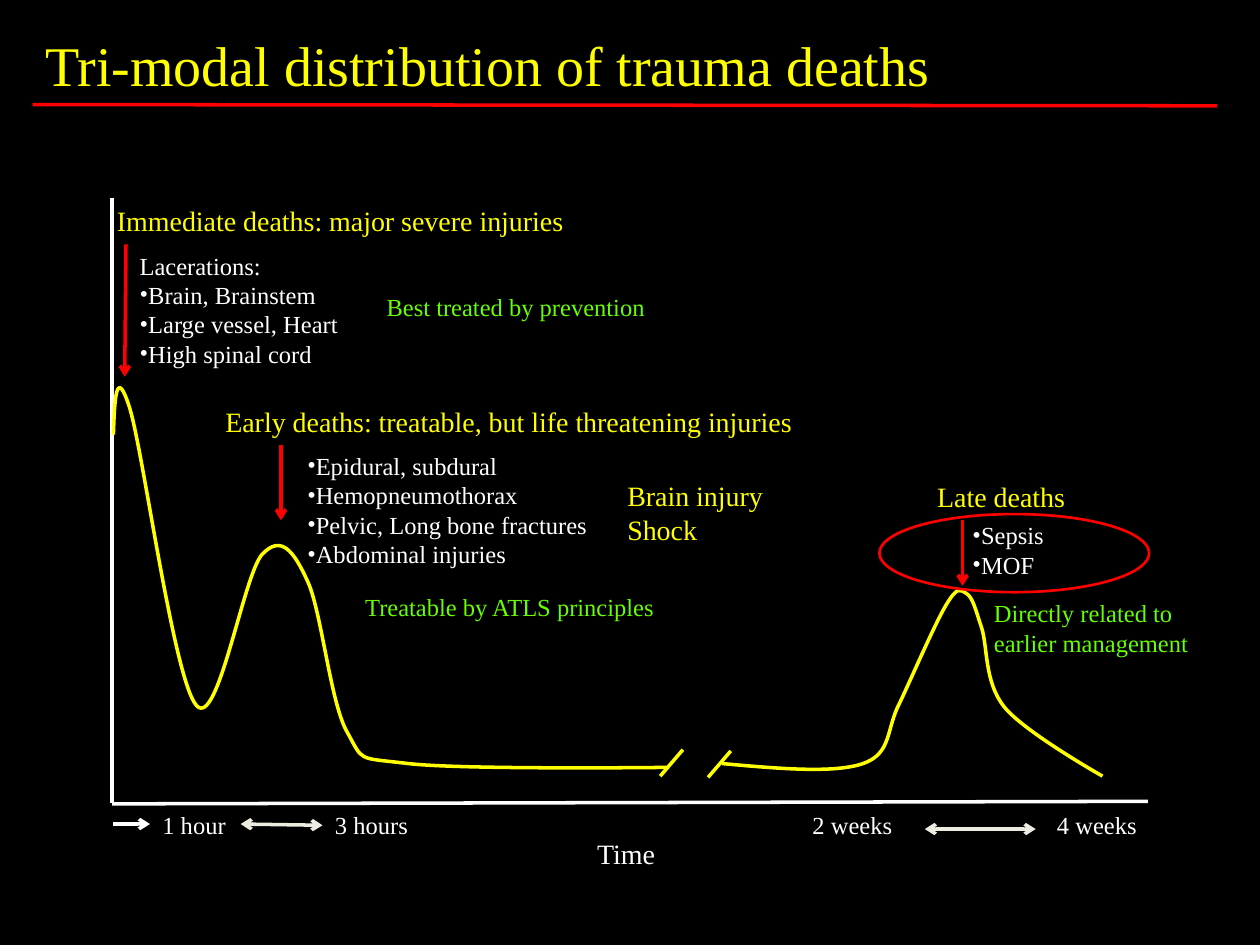
import pptx
import pptx.util
import pptx.dml.color
import pptx.enum.shapes
import pptx.enum.text
import pptx.oxml.ns
from lxml import etree

Inches = pptx.util.Inches
FONT = "Times New Roman"
COLORS = {
    "background": "000000",
    "yellow": "FFFF00",
    "white": "FFFFFF",
    "red": "FF0000",
    "green": "66FF00",
    "cream": "EEECE1",
}
EARLY_CURVE = [
    (0.9, 3.45),
    (0.91, 3.17), (0.92, 2.89), (1.03, 3.24),
    (1.14, 3.6), (1.38, 5.4), (1.56, 5.6),
    (1.73, 5.79), (1.93, 4.57), (2.08, 4.4),
    (2.23, 4.24), (2.33, 4.37), (2.44, 4.61),
    (2.55, 4.84), (2.62, 5.56), (2.75, 5.8),
    (2.89, 6.05), (2.82, 6.01), (3.24, 6.06),
    (3.67, 6.11), (5.31, 6.09), (5.31, 6.09),
]
LATE_CURVE = [
    (5.73, 6.06),
    (6.17, 6.1), (6.62, 6.14), (6.85, 6.06),
    (7.08, 5.98), (7.03, 5.79), (7.14, 5.58),
    (7.24, 5.37), (7.42, 4.95), (7.51, 4.8),
    (7.6, 4.65), (7.62, 4.68), (7.67, 4.71),
    (7.72, 4.74), (7.74, 4.83), (7.79, 4.98),
    (7.84, 5.13), (7.81, 5.41), (7.97, 5.61),
    (8.13, 5.81), (8.75, 6.16), (8.75, 6.16),
]


def rgb(name):
    return pptx.dml.color.RGBColor.from_string(COLORS[name])


def add_xml(parent, tag, **attributes):
    return etree.SubElement(parent, pptx.oxml.ns.qn(tag), **attributes)


def set_line(sp, color, width=2):
    sp.line.color.rgb = rgb(color)
    sp.line.width = pptx.util.Pt(width)


def add_text(slide, box, lines, color, size=14, bullets_from=None, wrap=False):
    sp = slide.shapes.add_textbox(*map(Inches, box))
    tf = sp.text_frame
    tf.word_wrap = wrap
    tf.auto_size = pptx.enum.text.MSO_AUTO_SIZE.SHAPE_TO_FIT_TEXT
    tf.text = "\n".join(lines)
    for i, p in enumerate(tf.paragraphs):
        if bullets_from is not None and i >= bullets_from:
            pPr = p._p.get_or_add_pPr()
            add_xml(pPr, "a:buFont", typeface=FONT)
            add_xml(pPr, "a:buChar", char="•")
        for r in p.runs:
            r.font.name = FONT
            r.font.size = pptx.util.Pt(size)
            r.font.color.rgb = rgb(color)


def add_line(slide, start, end, color, arrows=()):
    sp = slide.shapes.add_connector(
        pptx.enum.shapes.MSO_CONNECTOR.STRAIGHT,
        *map(Inches, start + end))
    set_line(sp, color)
    ln = sp.line._get_or_add_ln()
    for arrow in arrows:
        add_xml(ln, f"a:{arrow}", type="arrow")
    add_xml(sp._element.spPr, "a:effectLst")


def add_curve(slide, points, color):
    start, *rest = [tuple(map(Inches, point)) for point in points]
    builder = slide.shapes.build_freeform(*start, scale=1.0)
    builder.add_line_segments(rest, close=False)
    sp = builder.convert_to_shape()
    sp.shadow.inherit = False
    sp.fill.background()
    set_line(sp, color)
    segments = sp._element.findall(".//" + pptx.oxml.ns.qn("a:lnTo"))
    outline = segments[0].getparent()
    for i in range(0, len(segments), 3):
        bezier = add_xml(outline, "a:cubicBezTo")
        for segment in segments[i:i + 3]:
            bezier.append(segment[0])
            outline.remove(segment)


def add_ellipse(slide, box, color):
    sp = slide.shapes.add_shape(
        pptx.enum.shapes.MSO_SHAPE.OVAL, *map(Inches, box))
    sp.shadow.inherit = False
    sp.fill.background()
    set_line(sp, color, 1.5)


def add_chart_lines(slide):
    add_line(slide, (0.89, 1.57), (0.89, 6.37), "white")
    add_line(slide, (9.11, 6.36), (0.89, 6.38), "white")
    add_curve(slide, EARLY_CURVE, "yellow")
    add_curve(slide, LATE_CURVE, "yellow")


def add_time_axis(slide):
    for left, width, label in (
            (1.19, 0.72, "1 hour"), (2.56, 0.79, "3 hours"),
            (6.35, 0.84, "2 weeks"), (8.29, 0.84, "4 weeks")):
        add_text(slide, (left, 6.38, width, 0.34), [label], "white")
    add_text(slide, (4.64, 6.59, 0.67, 0.37), ["Time"], "white", 16)


def add_phases(slide):
    for box, heading in (
            ((0.83, 1.57, 3.79, 0.37),
             "Immediate deaths: major severe injuries"),
            ((1.69, 3.16, 4.76, 0.37),
             "Early deaths: treatable, but life threatening injuries"),
            ((7.34, 3.76, 1.23, 0.37), "Late deaths")):
        add_text(slide, box, [heading], "yellow", 16)

    add_text(slide, (1.01, 1.94, 1.79, 1.04),
             ["Lacerations:", "Brain, Brainstem", "Large vessel, Heart",
              "High spinal cord"], "white", bullets_from=1)
    add_text(slide, (2.34, 3.53, 2.45, 1.04),
             ["Epidural, subdural", "Hemopneumothorax",
              "Pelvic, Long bone fractures", "Abdominal injuries"],
             "white", bullets_from=0)
    add_text(slide, (7.62, 4.08, 0.8, 0.57), ["Sepsis", "MOF"],
             "white", bullets_from=0)


def add_arrows_and_rules(slide):
    both = ("headEnd", "tailEnd")
    add_line(slide, (1.91, 6.54), (2.56, 6.55), "cream", both)
    add_line(slide, (0.9, 6.54), (1.19, 6.54), "white", ("tailEnd",))
    add_line(slide, (7.34, 6.58), (8.22, 6.58), "cream", both)
    add_line(slide, (0.26, 0.83), (9.66, 0.84), "red")
    for x, y in ((5.42, 5.95), (5.8, 5.96)):
        add_line(slide, (x, y), (x - 0.18, y + 0.21), "yellow")
    for start, end in (((1, 1.94), (0.99, 2.99)),
                       ((2.23, 3.53), (2.23, 4.13)),
                       ((7.64, 4.13), (7.64, 4.65))):
        add_line(slide, start, end, "red", ("tailEnd",))


def add_remarks(slide):
    add_text(slide, (2.97, 2.27, 2.27, 0.34),
             ["Best treated by prevention"], "green")
    add_text(slide, (2.8, 4.65, 2.5, 0.34),
             ["Treatable by ATLS principles"], "green")
    add_text(slide, (7.79, 4.7, 1.91, 0.57),
             ["Directly related to earlier management"], "green", wrap=True)
    add_text(slide, (4.88, 3.75, 1.29, 0.64),
             ["Brain injury", "Shock"], "yellow", 16)
    add_ellipse(slide, (6.98, 4.08, 2.14, 0.62), "red")


def main():
    prs = pptx.Presentation()
    prs.slide_width = Inches(10)
    prs.slide_height = Inches(7.5)
    slide = prs.slides.add_slide(prs.slide_layouts[6])
    slide.background.fill.solid()
    slide.background.fill.fore_color.rgb = rgb("background")
    add_text(slide, (0.26, 0.19, 7.29, 0.64),
             ["Tri-modal distribution of trauma deaths"], "yellow", 32)
    add_chart_lines(slide)
    add_time_axis(slide)
    add_phases(slide)
    add_arrows_and_rules(slide)
    add_remarks(slide)
    prs.save("out.pptx")


if __name__ == "__main__":
    main()
